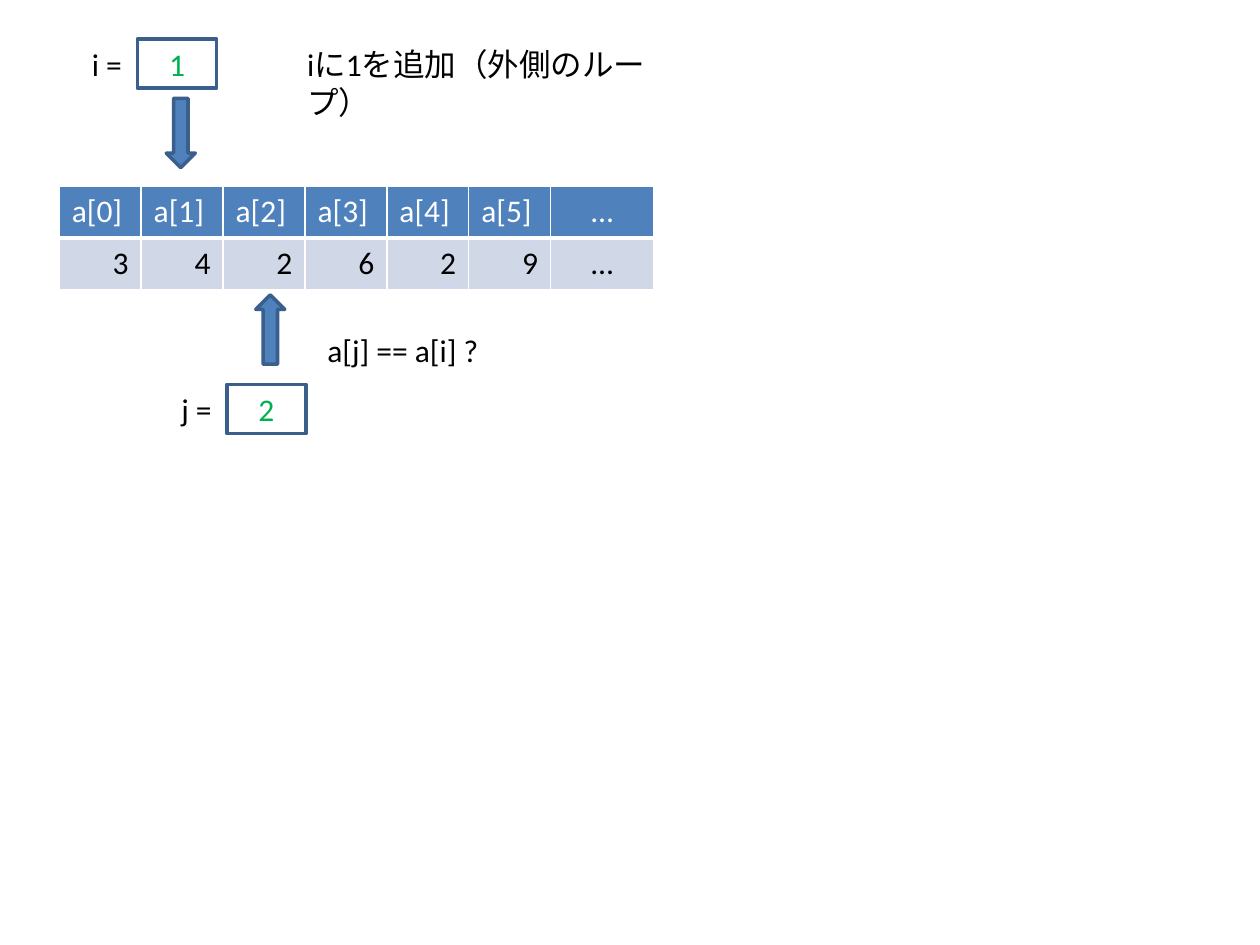
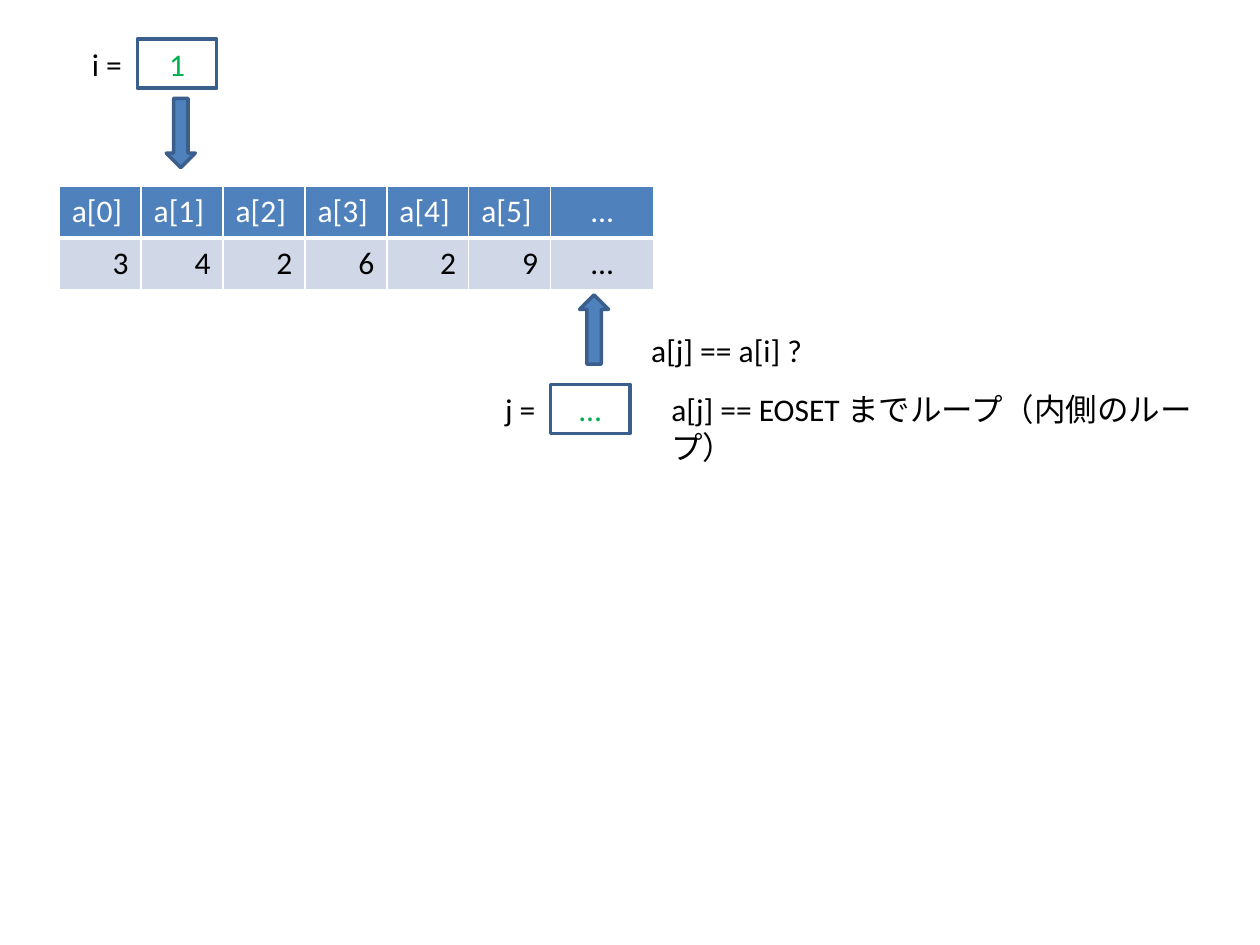
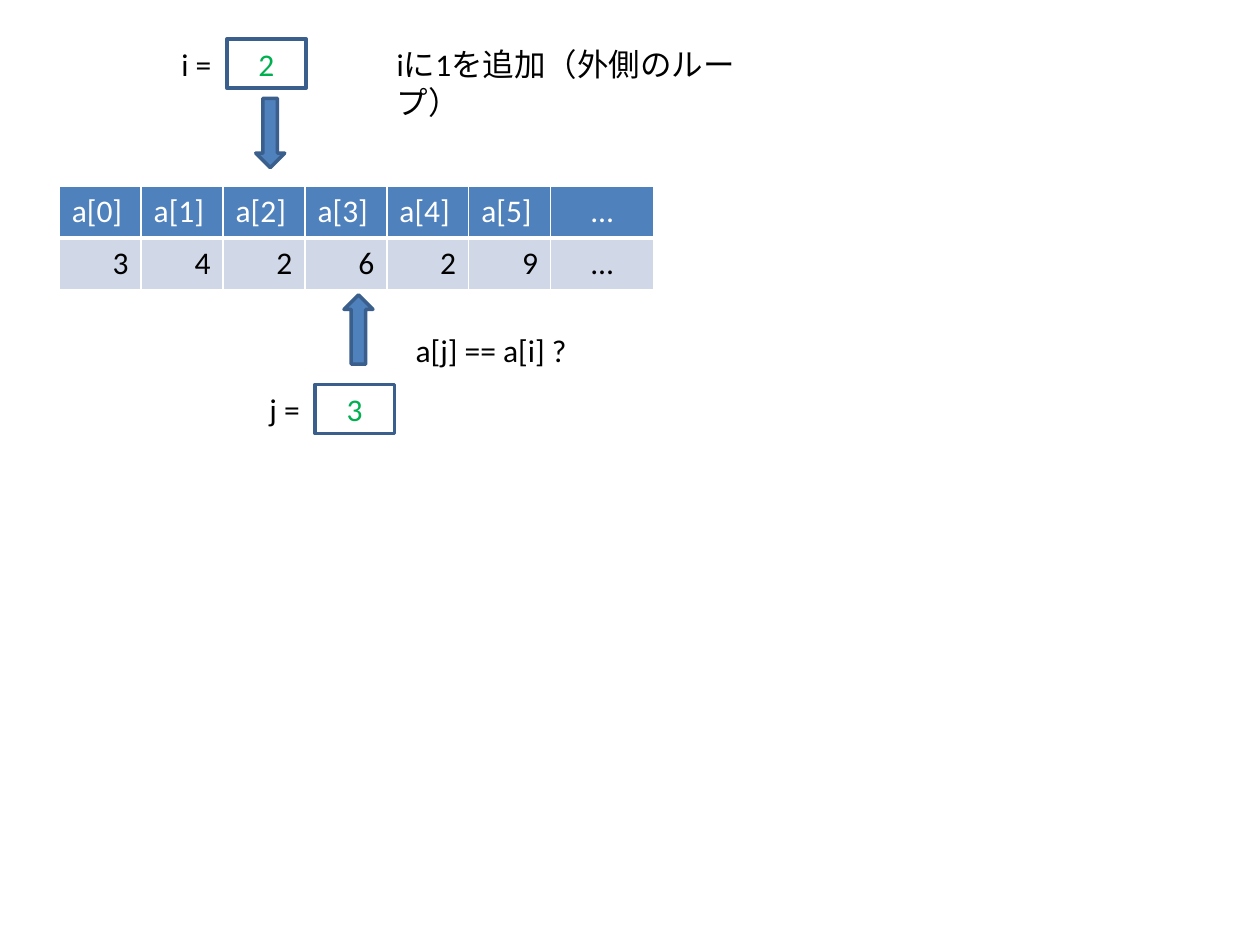
"""Build three slides that trace a nested loop comparing array elements."""
from lxml.etree import SubElement
from pptx import Presentation
from pptx.dml.color import RGBColor
from pptx.enum.shapes import MSO_SHAPE as Shape
from pptx.enum.text import MSO_ANCHOR as Anchor, MSO_AUTO_SIZE as AutoSize, PP_ALIGN as Align
from pptx.oxml.ns import qn
from pptx.util import Inches, Pt

COLORS = {
    "blue": "4F81BD",
    "outline": "3A5F8C",
    "pale": "D0D8E8",
    "green": "00B050",
    "white": "FFFFFF",
    "black": "000000",
}
FONT, FONT_SIZE = "Calibri", 18
HEADINGS = ["a[0]", "a[1]", "a[2]", "a[3]", "a[4]", "a[5]", "…"]
VALUES = ["3", "4", "2", "6", "2", "9", "…"]
COLUMN_WIDTHS = [0.65] * 6 + [0.82]
ROW_HEIGHT = 0.41
I_TOP, J_TOP = 0.31, 3.05
I_ARROW_TOP, J_ARROW_TOP = 0.78, 2.34
QUESTION_TOP = 2.58
OUTER_LOOP = "iに1を追加（外側のループ）"
INNER_LOOP = "a[j] == EOSET までループ（内側のループ）"


def rgb(name):
    """Return the named palette colour."""
    return RGBColor.from_string(COLORS[name])


def write(frame, text, color="black", align=Align.LEFT):
    """Put one formatted paragraph into a text frame."""
    frame.text = text
    paragraph = frame.paragraphs[0]
    paragraph.alignment = align
    font = paragraph.font
    font.name, font.size, font.bold = FONT, Pt(FONT_SIZE), False
    font.color.rgb = rgb(color)


def add_outlined(slide, preset, left, top, width, height, fill):
    """Add a flat preset shape with the shared outline."""
    shape = slide.shapes.add_shape(
        preset, Inches(left), Inches(top), Inches(width), Inches(height))
    shape.shadow.inherit = False
    shape.fill.solid()
    shape.fill.fore_color.rgb = rgb(fill)
    shape.line.color.rgb = rgb("outline")
    shape.line.width = Pt(2)
    return shape


def add_caption(slide, text, left, top, width, wrap=False):
    """Add a line of plain text, wrapped to its width on request."""
    caption = slide.shapes.add_textbox(
        Inches(left), Inches(top), Inches(width), Inches(0.4))
    frame = caption.text_frame
    write(frame, text)
    frame.word_wrap = wrap
    frame.auto_size = AutoSize.SHAPE_TO_FIT_TEXT


def add_borders(cell, bottom):
    """Draw white borders around a cell."""
    properties = cell._tc.get_or_add_tcPr()
    for side, points in (("L", 1), ("R", 1), ("T", 1), ("B", bottom)):
        border = SubElement(properties, qn(f"a:ln{side}"), w=str(Pt(points)))
        fill = SubElement(border, qn("a:solidFill"))
        SubElement(fill, qn("a:srgbClr"), val=COLORS["white"])


def add_array(slide):
    """Add the array table with its index headings and values."""
    array = slide.shapes.add_table(
        2, len(HEADINGS), Inches(0.47), Inches(1.48),
        Inches(sum(COLUMN_WIDTHS)), Inches(2 * ROW_HEIGHT)).table
    array.first_row = array.horz_banding = False
    for column, width in zip(array.columns, COLUMN_WIDTHS):
        column.width = Inches(width)
    row_styles = (
        (HEADINGS, "blue", "white", Align.LEFT, 3),
        (VALUES, "pale", "black", Align.RIGHT, 1),
    )
    for row, (texts, fill, color, align, bottom) in enumerate(row_styles):
        array.rows[row].height = Inches(ROW_HEIGHT)
        for column, text in enumerate(texts):
            cell = array.cell(row, column)
            add_borders(cell, bottom)
            cell.fill.solid()
            cell.fill.fore_color.rgb = rgb(fill)
            write(cell.text_frame, text, color, Align.CENTER if text == "…" else align)


def add_counter(slide, name, value, left, top, arrow_top, rotation=0):
    """Add a loop counter: label, value box and arrow to the array."""
    arrow = add_outlined(
        slide, Shape.DOWN_ARROW, left + 0.23, arrow_top, 0.23, 0.55, "blue")
    arrow.rotation = rotation
    value_box = add_outlined(slide, Shape.RECTANGLE, left, top, 0.63, 0.39, "white")
    write(value_box.text_frame, value, "green", Align.CENTER)
    value_box.text_frame.vertical_anchor = Anchor.MIDDLE
    add_caption(slide, f"{name} =", left - 0.46, top, 0.45)


def add_step(deck, i_value, i_left, j_value, j_left):
    """Add a slide showing the array with both counters."""
    slide = deck.slides.add_slide(deck.slide_layouts[6])
    add_array(slide)
    add_counter(slide, "i", i_value, i_left, I_TOP, I_ARROW_TOP)
    add_counter(slide, "j", j_value, j_left, J_TOP, J_ARROW_TOP, rotation=180)
    add_caption(slide, "a[j] == a[i] ?", j_left + 0.7, QUESTION_TOP, 1.41)
    return slide


def main():
    """Build the deck and save it."""
    deck = Presentation()
    deck.slide_width, deck.slide_height = Inches(10), Inches(7.5)
    first, second, third, last = 1.09, 1.8, 2.5, 4.37

    start = add_step(deck, "1", first, "2", second)
    add_caption(start, OUTER_LOOP, first + 1.25, I_TOP, 3.07, wrap=True)

    inner_end = add_step(deck, "1", first, "…", last)
    add_caption(inner_end, INNER_LOOP, last + 0.86, J_TOP, 4.51, wrap=True)

    next_pass = add_step(deck, "2", second, "3", third)
    add_caption(next_pass, OUTER_LOOP, second + 1.25, I_TOP, 3.07, wrap=True)

    deck.save("out.pptx")


if __name__ == "__main__":
    main()
